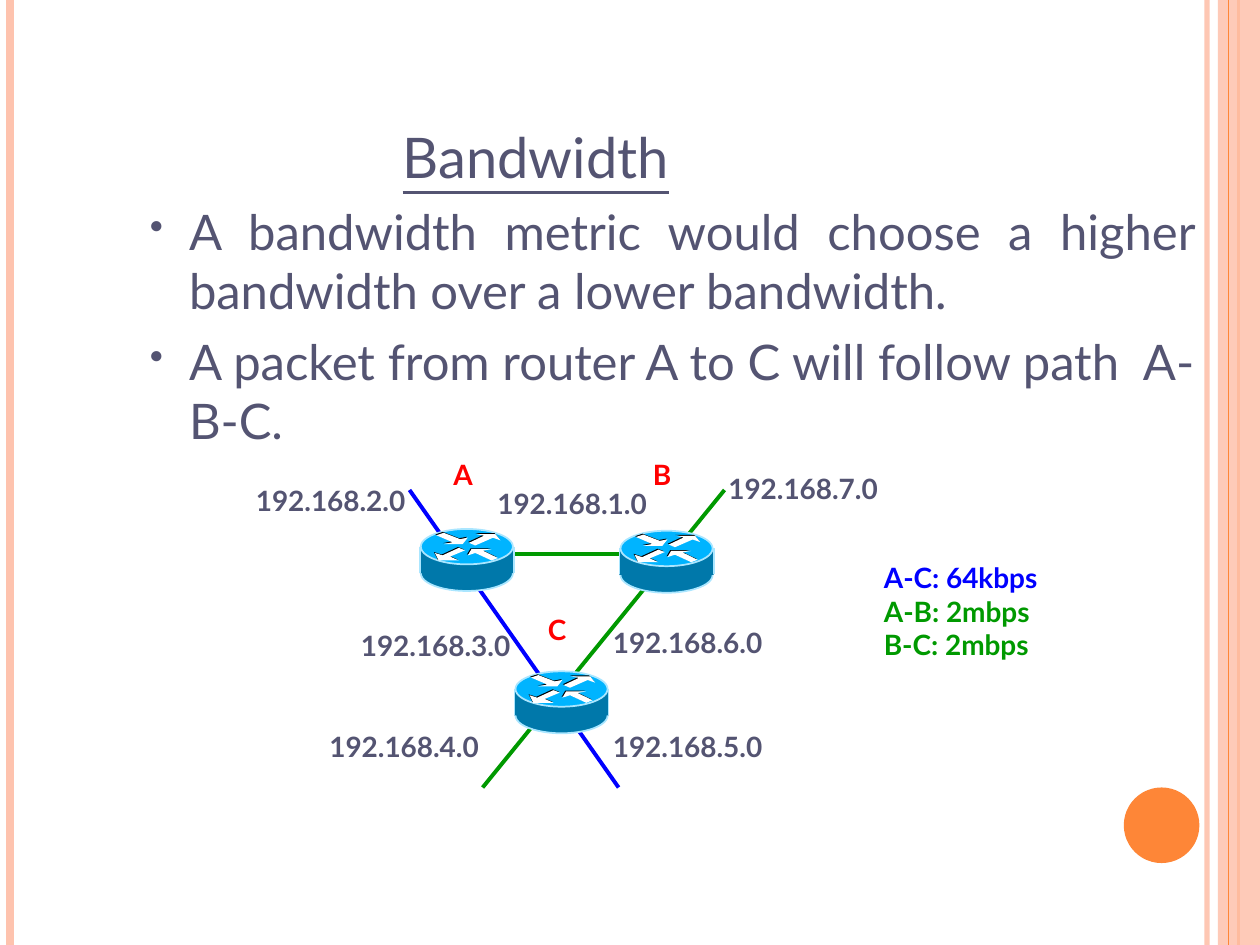
import pptx
import pptx.dml.color
import pptx.enum.shapes
import pptx.enum.text
import pptx.oxml.ns
import pptx.util
import lxml.etree

Pt = pptx.util.Pt
SHAPE = pptx.enum.shapes.MSO_SHAPE
ALIGN = pptx.enum.text.PP_ALIGN
FONT = "Lato"
SLATE, RED, BLUE, GREEN = "545472", "FF0000", "0000FF", "009900"
PEACH, ORANGE = "FEC3AE", "FE8637"
ROUTER_SIDE, ROUTER_TOP, ROUTER_EDGE = "0078AA", "00B4FF", "AAE6FF"

# Arrow outlines on a router's top, from the router's top left corner
ARROWS = [
    [(28.1, 7.9), (31.7, 9.4), (41.8, 5), (46.1, 6.5), (43.2, 2.9), (32.4, 2.9), (36.8, 3.8)],
    [(25.9, 12.2), (22.3, 10.8), (13, 15.1), (8.6, 13.7), (10.8, 18), (22.3, 18), (17.3, 15.8)],
    [(9.4, 3.6), (13.7, 2.2), (23, 5.8), (27.4, 5), (24.5, 8.6), (13.7, 8.6), (18.7, 7.6)],
    [(44.6, 16.6), (41, 18), (31.7, 13.7), (27.4, 15.1), (29.5, 11.5), (41, 11.5), (36, 12.4)],
]


def set_color(color_format, color, alpha=100):
    color_format.rgb = pptx.dml.color.RGBColor.from_string(color)
    if alpha < 100:
        clr = color_format._xFill.find(pptx.oxml.ns.qn("a:srgbClr"))
        lxml.etree.SubElement(clr, pptx.oxml.ns.qn("a:alpha"), val=str(alpha * 1000))


def paint(shape, fill, edge=None, alpha=100):
    shape.shadow.inherit = False
    shape.fill.solid()
    set_color(shape.fill.fore_color, fill, alpha)
    if edge:
        set_color(shape.line.color, edge)
        shape.line.width = Pt(1)
    else:
        shape.line.fill.background()


def add_line(slide, x1, y1, x2, y2, color, width, alpha=100):
    line = slide.shapes.add_connector(
        pptx.enum.shapes.MSO_CONNECTOR.STRAIGHT, Pt(x1), Pt(y1), Pt(x2), Pt(y2))
    line.line.width = Pt(width)
    line.line.fill.solid()
    set_color(line.line.fill.fore_color, color, alpha)
    lxml.etree.SubElement(line._element.spPr, pptx.oxml.ns.qn("a:effectLst"))


def add_preset(slide, kind, left, top, width, height, fill, edge=None, alpha=100):
    shape = slide.shapes.add_shape(kind, Pt(left), Pt(top), Pt(width), Pt(height))
    paint(shape, fill, edge, alpha)


def add_outline(slide, points, color):
    corners = [(Pt(x), Pt(y)) for x, y in points]
    builder = slide.shapes.build_freeform(*corners[0])
    builder.add_line_segments(corners[1:])
    paint(builder.convert_to_shape(), color)


def add_router(slide, left, top):
    add_preset(slide, SHAPE.OVAL, left + 0.6, top + 15.2, 52.6, 20.2, ROUTER_SIDE, ROUTER_EDGE)
    add_preset(slide, SHAPE.RECTANGLE, left, top + 10.2, 53.8, 15, ROUTER_SIDE)
    add_preset(slide, SHAPE.OVAL, left + 0.6, top, 52.6, 20.2, ROUTER_TOP, ROUTER_EDGE)
    # Each white arrow lies on a black one, slightly offset
    for shift, color in ((-0.5, "000000"), (0, "FFFFFF")):
        for arrow in ARROWS:
            points = [(left + x + shift, top + y + shift) for x, y in arrow]
            add_outline(slide, points, color)
    for x in (left, left + 53.8):
        add_line(slide, x, top + 10, x, top + 25, ROUTER_EDGE, 1)


def add_span(para, text, size, color, bold=False, underline=False):
    span = para.add_run()
    span.text = text
    span.font.name = FONT
    span.font.size = Pt(size)
    span.font.bold = bold
    span.font.underline = underline
    set_color(span.font.color, color)


def set_frame(box, side=0, edge=0, wrap=True):
    frame = box.text_frame
    frame.word_wrap = wrap
    frame.auto_size = pptx.enum.text.MSO_AUTO_SIZE.NONE
    frame.vertical_anchor = pptx.enum.text.MSO_ANCHOR.TOP
    frame.margin_left = frame.margin_right = Pt(side)
    frame.margin_top = frame.margin_bottom = Pt(edge)
    return frame


def add_label(slide, left, top, width, height, lines, align=ALIGN.LEFT):
    box = slide.shapes.add_textbox(Pt(left), Pt(top), Pt(width), Pt(height))
    frame = set_frame(box, 7.2, 3.6)
    for index, (text, color) in enumerate(lines):
        para = frame.add_paragraph() if index else frame.paragraphs[0]
        para.alignment = align
        add_span(para, text, 16, color, bold=True)


def add_title(slide, text):
    title = slide.shapes.title
    title.left, title.top, title.width, title.height = Pt(230), Pt(69.8), Pt(180), Pt(38.4)
    para = set_frame(title).paragraphs[0]
    para.alignment = ALIGN.LEFT
    para.line_spacing = 1.0
    para.space_before = Pt(0)
    add_span(para, text, 32, SLATE, underline=True)


def add_bullets(slide, lines):
    box = slide.shapes.add_textbox(Pt(49.7), Pt(115.2), Pt(632.9), Pt(149))
    frame = set_frame(box)
    for index, text in enumerate(lines):
        para = frame.add_paragraph() if index else frame.paragraphs[0]
        para.alignment = ALIGN.JUSTIFY
        if index:
            para.space_before = Pt(7)
        props = para._p.get_or_add_pPr()
        props.set("marL", str(Pt(58.3)))
        props.set("indent", str(Pt(-22.3)))
        bullet_color = lxml.etree.SubElement(props, pptx.oxml.ns.qn("a:buClr"))
        lxml.etree.SubElement(bullet_color, pptx.oxml.ns.qn("a:srgbClr"), val=SLATE)
        lxml.etree.SubElement(props, pptx.oxml.ns.qn("a:buSzPct"), val="80000")
        lxml.etree.SubElement(props, pptx.oxml.ns.qn("a:buChar"), char="•")
        add_span(para, text, 28, SLATE)


def add_border(slide):
    for x, color, width, alpha in ((689.8, PEACH, 3, 93), (5.8, PEACH, 4.5, 100),
                                   (707.8, ORANGE, 1.5, 100)):
        add_line(slide, x, 0, x, 540, color, width, alpha)
    add_preset(slide, SHAPE.RECTANGLE, 696, 0, 24, 540, PEACH, alpha=87)
    add_line(slide, 702, 0, 702, 540, ORANGE, 0.75)
    add_preset(slide, SHAPE.OVAL, 642.2, 450, 43.2, 43.2, ORANGE)


def add_network(slide):
    # Links
    add_line(slide, 234, 280, 353.5, 450, BLUE, 2.25)
    add_line(slide, 414, 280, 275.8, 450, GREEN, 2.25)
    add_line(slide, 264, 316.8, 384, 316.8, GREEN, 2.25)

    # Routers and their names
    for left, top in ((239.9, 302.3), (354, 303.3), (294, 383.6)):
        add_router(slide, left, top)
    for name, left, top in (("A", 252, 257.8), ("B", 366, 257.8), ("C", 306, 346.3)):
        add_label(slide, left, top, 29.5, 26.6, [(name, RED)])

    # Network addresses
    for number, left, top in ((1, 270, 274.3), (7, 402, 265.7), (6, 336, 354.2),
                              (5, 336, 413.3), (2, 132, 272.9), (3, 192, 355.7),
                              (4, 174, 413.3)):
        add_label(slide, left, top, 113.8, 26.6,
                  [(f"192.168.{number}.0", SLATE)], ALIGN.CENTER)

    # Link speeds
    add_label(slide, 498, 316.8, 137.5, 64.8,
              [("A-C: 64kbps", BLUE), ("A-B: 2mbps", GREEN), ("B-C: 2mbps", GREEN)])


def main():
    deck = pptx.Presentation()
    deck.slide_width, deck.slide_height = Pt(720), Pt(540)
    page = deck.slides.add_slide(deck.slide_layouts[5])
    add_border(page)
    add_title(page, "Bandwidth")
    add_bullets(page, [
        "A bandwidth metric would choose a higher bandwidth over a lower bandwidth.",
        "A packet from router A to C will follow path  A-B-C.",
    ])
    add_network(page)
    deck.save("out.pptx")


if __name__ == "__main__":
    main()
